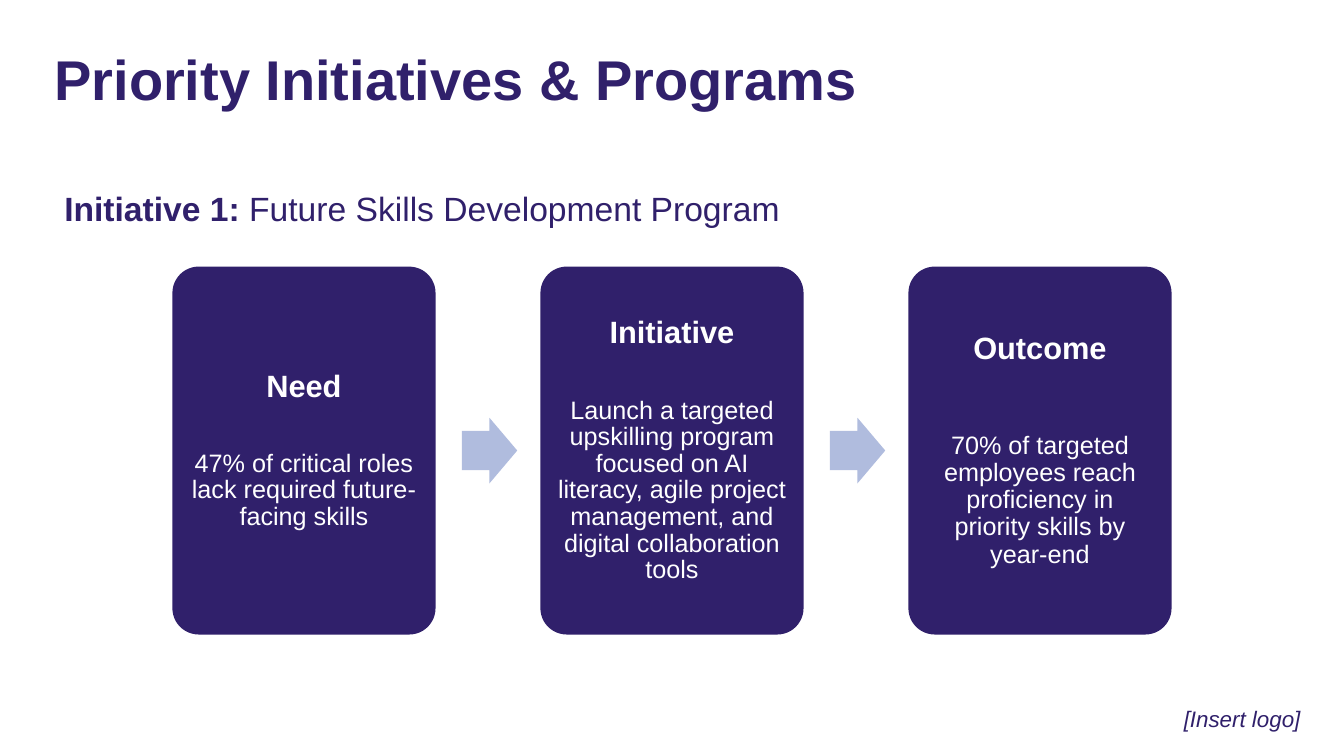
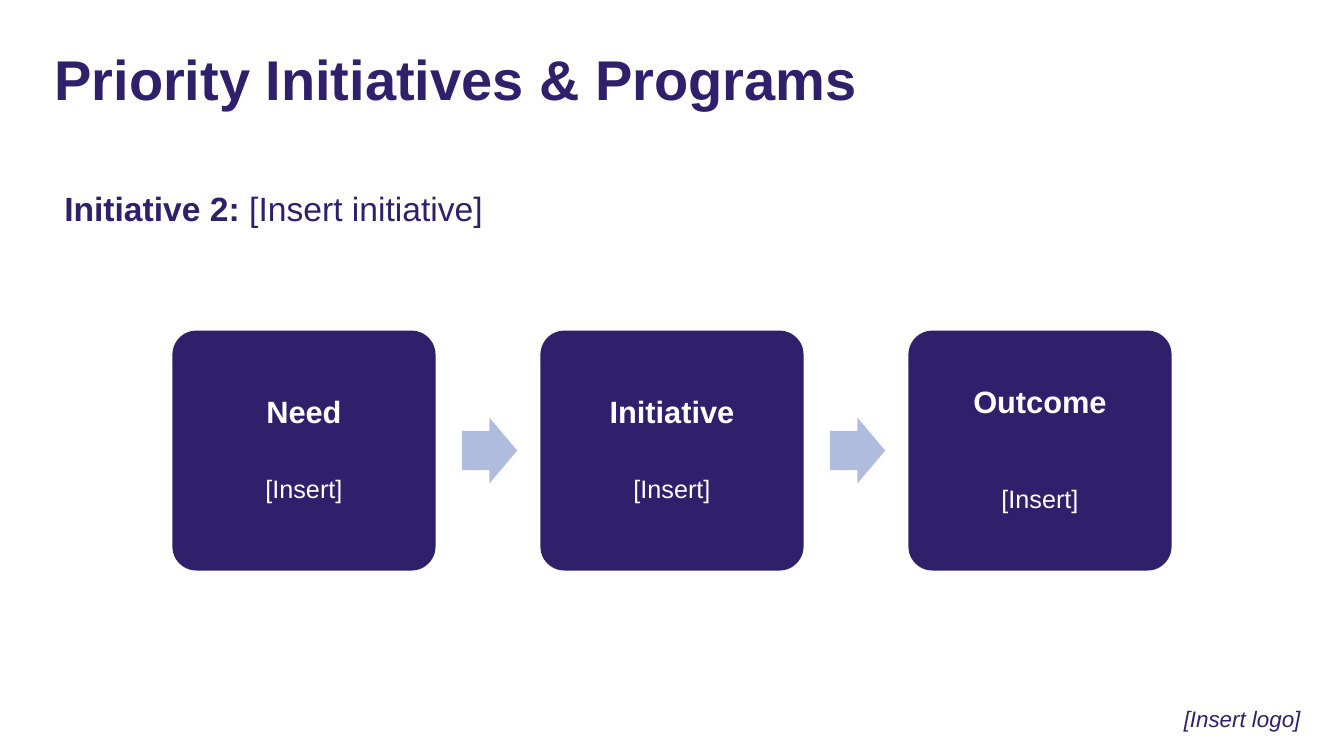
import pptx
import pptx.dml.color
import pptx.enum.shapes
import pptx.enum.text
import pptx.util

Inches = pptx.util.Inches
Pt = pptx.util.Pt
Shape = pptx.enum.shapes.MSO_SHAPE
Align = pptx.enum.text.PP_ALIGN
Anchor = pptx.enum.text.MSO_ANCHOR

NEED_STYLE = {"gap": 33.5, "leading": 19}
OUTCOME_STYLE = {"gap": 47, "leading": 19.5}
STAGES = [("Need", NEED_STYLE), ("Initiative", NEED_STYLE), ("Outcome", OUTCOME_STYLE)]

INITIATIVES = [
    (
        "Initiative 1:",
        " Future Skills Development Program",
        3.65,
        [
            "47% of critical roles lack required future-facing skills",
            "Launch a targeted upskilling program focused on AI literacy, "
            "agile project management, and digital collaboration tools",
            "70% of targeted employees reach proficiency in priority skills by year-end",
        ],
    ),
    ("Initiative 2:", " [Insert initiative]", 2.38, ["[Insert]"] * 3),
]


def rgb(code):
    return pptx.dml.color.RGBColor.from_string(code)


class Deck:
    font = "Arial"
    navy = "30206B"
    pale = "B0BCDE"
    white = "FFFFFF"
    margin = 0.54
    flow_left = 1.71
    flow_middle = 4.47
    card_width = 2.61
    card_pitch = 3.65
    arrow_offset = 2.87

    def __init__(self):
        self.presentation = pptx.Presentation()
        self.presentation.slide_width = Inches(13.33)
        self.presentation.slide_height = Inches(7.5)
        self.slide = None

    def start_slide(self, heading):
        layout = self.presentation.slide_layouts.get_by_name("Title Only")
        self.slide = self.presentation.slides.add_slide(layout)
        title = self.slide.shapes.title
        title.left, title.top = Inches(self.margin), Inches(0.52)
        title.width, title.height = Inches(12.27), Inches(0.66)
        frame = self.prepare_frame(title, 0, 0, Anchor.TOP)
        line = frame.paragraphs[0]
        line.alignment = Align.LEFT
        line.line_spacing = 0.9
        self.add_run(line, heading, 40, self.navy, bold=True)
        self.add_logo_note()

    def prepare_frame(self, holder, side, vertical, anchor):
        frame = holder.text_frame
        frame.word_wrap = True
        frame.auto_size = pptx.enum.text.MSO_AUTO_SIZE.NONE
        frame.vertical_anchor = anchor
        frame.margin_left = frame.margin_right = Inches(side)
        frame.margin_top = frame.margin_bottom = Inches(vertical)
        return frame

    def add_run(self, line, text, size, color, bold=False, italic=False):
        run = line.add_run()
        run.text = text
        run.font.name = self.font
        run.font.size = Pt(size)
        run.font.bold = bold
        run.font.italic = italic
        run.font.color.rgb = rgb(color)

    def add_logo_note(self):
        note = self.slide.shapes.add_textbox(
            Inches(11.55), Inches(7), Inches(1.54), Inches(0.27)
        )
        line = self.prepare_frame(note, 0, 0, Anchor.TOP).paragraphs[0]
        line.alignment = Align.CENTER
        self.add_run(line, "[Insert logo]", 16, self.navy, italic=True)

    def add_initiative(self, label, name):
        initiative = self.slide.shapes.add_textbox(
            Inches(self.margin), Inches(1.82), Inches(10.34), Inches(0.5)
        )
        line = self.prepare_frame(initiative, 0.1, 0.05, Anchor.TOP).paragraphs[0]
        self.add_run(line, label, 24, self.navy, bold=True)
        self.add_run(line, name, 24, self.navy)

    def add_block(self, preset, left, width, height, color, adjustments):
        block = self.slide.shapes.add_shape(
            preset,
            Inches(left),
            Inches(self.flow_middle - height / 2),
            Inches(width),
            Inches(height),
        )
        for index, value in enumerate(adjustments):
            block.adjustments[index] = value
        block.shadow.inherit = False
        block.fill.solid()
        block.fill.fore_color.rgb = rgb(color)
        block.line.fill.background()
        return block

    def add_card(self, left, height, stage, detail, gap, leading):
        card = self.add_block(
            Shape.ROUNDED_RECTANGLE, left, self.card_width, height, self.navy, [0.1]
        )
        frame = self.prepare_frame(card, 0.09, 0.09, Anchor.MIDDLE)
        heading = frame.paragraphs[0]
        heading.line_spacing = 0.9
        heading.space_after = Pt(gap)
        self.add_run(heading, stage, 22, self.white, bold=True)
        body = frame.add_paragraph()
        body.line_spacing = Pt(leading)
        self.add_run(body, detail, 18, self.white)
        for line in frame.paragraphs:
            line.alignment = Align.CENTER

    def add_arrow(self, left):
        self.add_block(Shape.RIGHT_ARROW, left, 0.55, 0.65, self.pale, [0.6, 0.5])

    def add_flow(self, height, details):
        for index, ((stage, style), detail) in enumerate(zip(STAGES, details)):
            left = self.flow_left + index * self.card_pitch
            self.add_card(left, height, stage, detail, **style)
            if index < len(STAGES) - 1:
                self.add_arrow(left + self.arrow_offset)


def main():
    deck = Deck()
    for label, name, height, details in INITIATIVES:
        deck.start_slide("Priority Initiatives & Programs")
        deck.add_initiative(label, name)
        deck.add_flow(height, details)
    deck.presentation.save("out.pptx")


if __name__ == "__main__":
    main()
